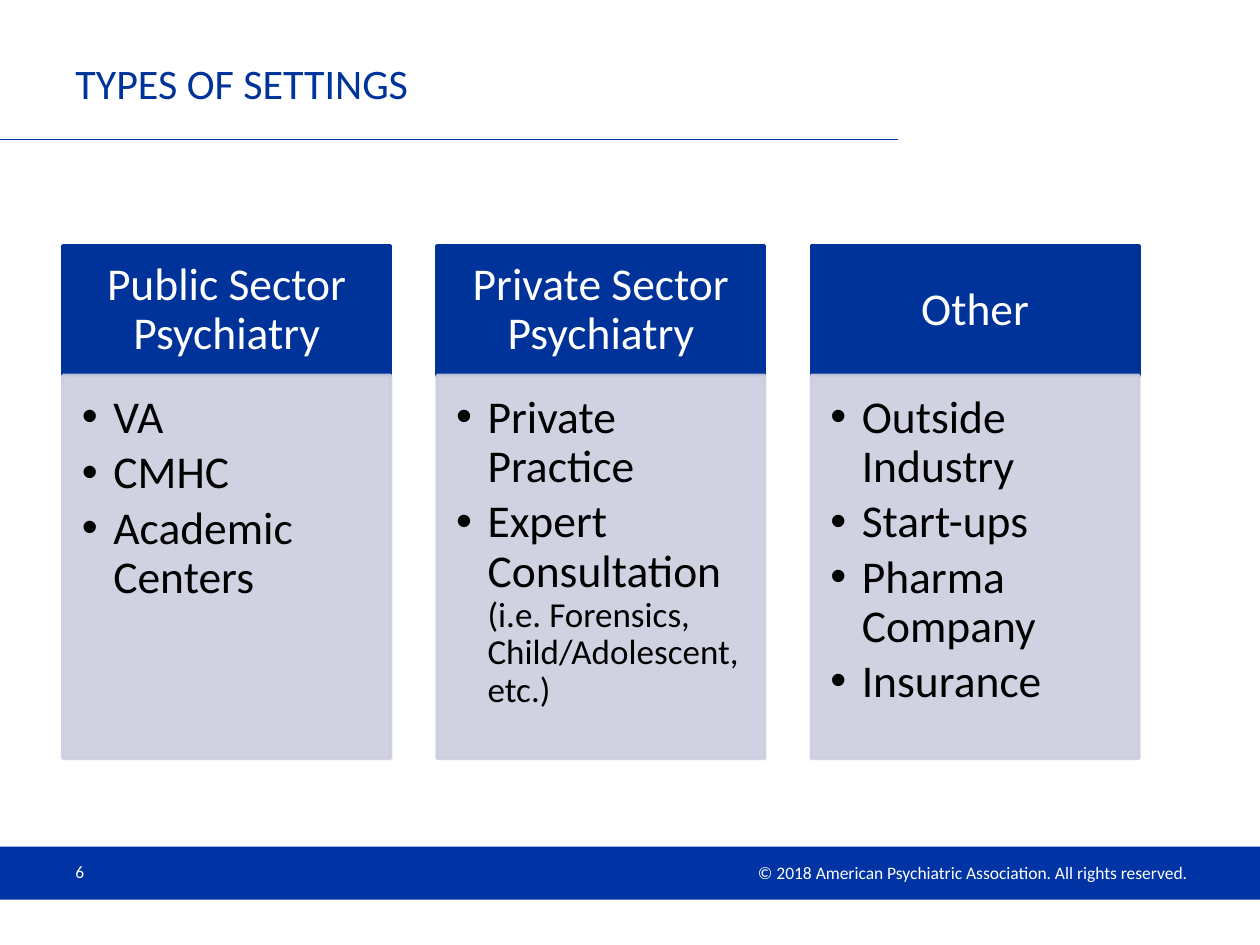
import collections
import dataclasses
import pptx
import pptx.util
import pptx.dml.color
import pptx.enum.shapes
import pptx.enum.text
import pptx.oxml
import pptx.oxml.ns

Box = collections.namedtuple("Box", "x y w h")
Align = pptx.enum.text.PP_ALIGN
Anchor = pptx.enum.text.MSO_ANCHOR
COLS, ROWS = 100, 75
WIDE, HIGH = pptx.util.Inches(10), pptx.util.Inches(7.5)


@dataclasses.dataclass(frozen=True)
class Theme:
    font: str = "Calibri"
    navy: str = "003399"
    bar: str = "0033A3"
    pale: str = "CCCEDE"
    white: str = "FFFFFF"
    black: str = "000000"
    solid: int = 90
    title: int = 24
    body: int = 26
    aside: int = 20
    small: int = 10
    edge: float = 2
    rule: float = 0.75
    tight: float = 0.9
    after: float = 3.5


THEME = Theme()
CARDS = [
    ("Public Sector Psychiatry", [("VA",), ("CMHC",), ("Academic Centers",)]),
    ("Private Sector Psychiatry", [
        ("Private Practice",),
        ("Expert Consultation ", "(i.e. Forensics, Child/Adolescent, etc.)"),
    ]),
    ("Other", [("Outside Industry",), ("Start-ups",),
               ("Pharma Company",), ("Insurance",)]),
]


def across(cols):
    return round(cols * WIDE / COLS)


def down(rows):
    return round(rows * HIGH / ROWS)


def place(box):
    return across(box.x), down(box.y), across(box.w), down(box.h)


def rgb(tone):
    return pptx.dml.color.RGBColor.from_string(tone)


def node(tag, **attrs):
    item = pptx.oxml.parse_xml(f"<a:{tag} {pptx.oxml.ns.nsdecls('a')}/>")
    for key, val in attrs.items():
        item.set(key, str(val))
    return item


def style(run, size, tone):
    run.font.name = THEME.font
    run.font.size = pptx.util.Pt(size)
    run.font.color.rgb = rgb(tone)


def label(slide, box, text, size, tone, align=Align.LEFT):
    shape = slide.shapes.add_textbox(*place(box))
    frame = shape.text_frame
    frame.word_wrap = True
    frame.vertical_anchor = Anchor.MIDDLE
    frame.text = text
    para = frame.paragraphs[0]
    para.alignment = align
    style(para.runs[0], size, tone)


def panel(slide, box, tone, edge=0, solid=100):
    kind = pptx.enum.shapes.MSO_SHAPE.RECTANGLE
    shape = slide.shapes.add_shape(kind, *place(box))
    shape.shadow.inherit = False
    shape.fill.solid()
    shape.fill.fore_color.rgb = rgb(tone)
    if edge:
        shape.line.color.rgb = rgb(tone)
        shape.line.width = pptx.util.Pt(edge)
    else:
        shape.line.fill.background()
    if solid < 100:
        for hue in shape.element.spPr.iter(pptx.oxml.ns.qn("a:srgbClr")):
            hue.append(node("alpha", val=solid * 1000))
    return shape


def inset(frame, left, top, right, base):
    frame.word_wrap = True
    frame.margin_left, frame.margin_right = across(left), across(right)
    frame.margin_top, frame.margin_bottom = down(top), down(base)


def point(para, parts):
    para.text = parts[0]
    para.alignment = Align.LEFT
    para.level = 1
    para.line_spacing = THEME.tight
    para.space_after = pptx.util.Pt(THEME.after)
    props = para._p.get_or_add_pPr()
    props.set("marL", str(across(2.5)))
    props.set("indent", str(-across(2.5)))
    props.append(node("buFont", typeface="Arial"))
    props.append(node("buChar", char="•"))
    style(para.runs[0], THEME.body, THEME.black)
    for part in parts[1:]:
        run = para.add_run()
        run.text = part
        style(run, THEME.aside, THEME.black)


def card(slide, box, name, points):
    cap = 10.3
    top = panel(slide, box._replace(h=cap), THEME.navy, THEME.edge)
    frame = top.text_frame
    inset(frame, 2, 1.2, 2, 1.2)
    frame.vertical_anchor = Anchor.MIDDLE
    frame.text = name
    para = frame.paragraphs[0]
    para.alignment = Align.CENTER
    para.line_spacing = THEME.tight
    style(para.runs[0], THEME.body, THEME.white)

    rest = box._replace(y=box.y + cap, h=box.h - cap)
    frame = panel(slide, rest, THEME.pale, THEME.edge, THEME.solid).text_frame
    inset(frame, 1.5, 1.5, 2, 2.3)
    frame.vertical_anchor = Anchor.TOP
    for num, parts in enumerate(points):
        para = frame.add_paragraph() if num else frame.paragraphs[0]
        point(para, parts)


def deck(slide, box, cards):
    gap = 3.7
    wide = (box.w - gap * (len(cards) - 1)) / len(cards)
    for num, (name, points) in enumerate(cards):
        left = box.x + num * (wide + gap)
        card(slide, box._replace(x=left, w=wide), name, points)


def head(slide, box, text):
    label(slide, Box(box.x + 5, box.y, box.w - 5, box.h - 1.3),
          text, THEME.title, THEME.navy)
    base = down(box.y + box.h)
    line = slide.shapes.add_connector(
        pptx.enum.shapes.MSO_CONNECTOR.STRAIGHT,
        across(box.x), base, across(box.x + box.w), base)
    line.line.color.rgb = rgb(THEME.navy)
    line.line.width = pptx.util.Pt(THEME.rule)
    line._element.spPr.append(node("effectLst"))


def foot(slide, box, num, note):
    panel(slide, box, THEME.bar)
    label(slide, Box(box.x + 5, box.y, 23.3, box.h - 0.2),
          num, THEME.small, THEME.white)
    label(slide, Box(box.x + box.w - 48.2, box.y + 0.7, 43.7, 2.7),
          note, THEME.small, THEME.white, Align.RIGHT)


def main():
    show = pptx.Presentation()
    show.slide_width, show.slide_height = WIDE, HIGH
    slide = show.slides.add_slide(show.slide_layouts[6])
    foot(slide, Box(0, 67.2, COLS, 4.2), "6",
         "© 2018 American Psychiatric Association. All rights reserved. ")
    head(slide, Box(0, 3.4, 71.3, 7.7), "TYPES OF SETTINGS")
    deck(slide, Box(5, 19.5, 85.4, 40.7), CARDS)
    show.save("out.pptx")


if __name__ == "__main__":
    main()
